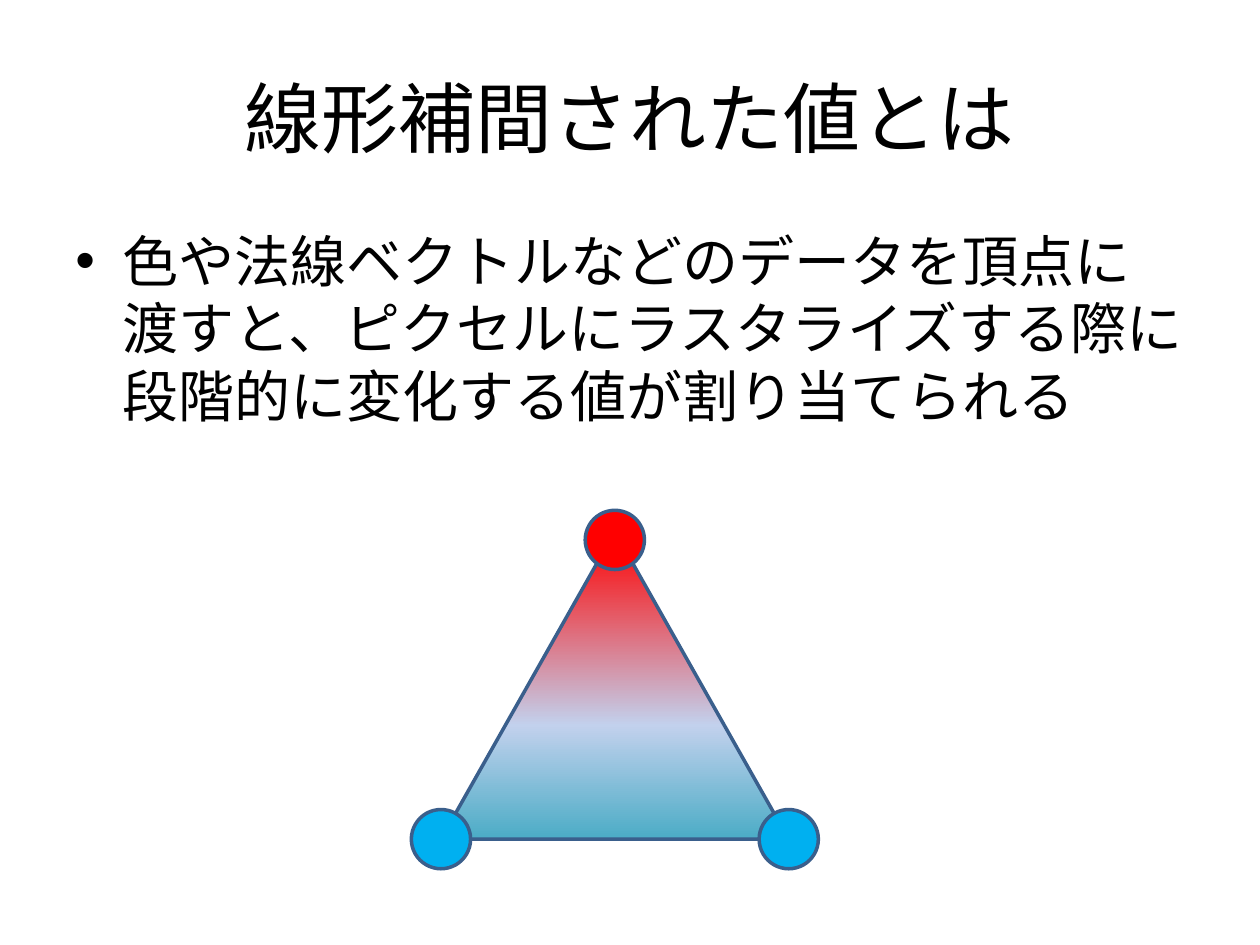
from copy import deepcopy

from lxml import etree
from pptx import Presentation
from pptx.dml.color import RGBColor
from pptx.enum.shapes import MSO_SHAPE
from pptx.enum.text import MSO_ANCHOR, PP_ALIGN
from pptx.oxml.ns import qn
from pptx.util import Pt

TRIANGLE = MSO_SHAPE.ISOSCELES_TRIANGLE
OVAL = MSO_SHAPE.OVAL
MIDDLE, TOP = MSO_ANCHOR.MIDDLE, MSO_ANCHOR.TOP
CENTER, LEFT = PP_ALIGN.CENTER, PP_ALIGN.LEFT

BLACK = RGBColor(0x00, 0x00, 0x00)
RED = RGBColor(0xFF, 0x00, 0x00)
PALE_BLUE = RGBColor(0xC2, 0xD1, 0xED)
TEAL = RGBColor(0x4B, 0xAC, 0xC6)
SKY = RGBColor(0x00, 0xB0, 0xF0)
OUTLINE = RGBColor(0x3A, 0x5F, 0x8C)


class Deck:
    font = "Noto Sans CJK JP"
    line_width = 2

    def __init__(self, prs):
        self.slide = prs.slides.add_slide(prs.slide_layouts[5])

    def set_text(self, sp, text, size, align, anchor):
        tf = sp.text_frame
        tf.word_wrap = True
        tf.vertical_anchor = anchor
        p = tf.paragraphs[0]
        p.text = text
        p.alignment = align
        for r in p.runs:
            r.font.size = Pt(size)
            r.font.name = self.font
            r.font.color.rgb = BLACK
            ea = etree.SubElement(r.font._element, qn("a:ea"))
            ea.set("typeface", self.font)
        return p

    def title(self, text, x, y, w, h):
        sp = self.slide.shapes.title
        sp.left, sp.top, sp.width, sp.height = Pt(x), Pt(y), Pt(w), Pt(h)
        self.set_text(sp, text, 44, CENTER, MIDDLE)

    def bullet(self, text, x, y, w, h, indent=27):
        sp = self.slide.shapes.add_textbox(Pt(x), Pt(y), Pt(w), Pt(h))
        p = self.set_text(sp, text, 32, LEFT, TOP)
        p.space_before = Pt(6.4)
        pPr = p._p.get_or_add_pPr()
        pPr.set("marL", str(Pt(indent)))
        pPr.set("indent", str(-Pt(indent)))
        etree.SubElement(pPr, qn("a:buFont")).set("typeface", "Arial")
        etree.SubElement(pPr, qn("a:buChar")).set("char", "•")

    def shape(self, kind, x, y, w, h):
        sp = self.slide.shapes.add_shape(kind, Pt(x), Pt(y), Pt(w), Pt(h))
        sp.shadow.inherit = False
        sp.line.color.rgb = OUTLINE
        sp.line.width = Pt(self.line_width)
        return sp

    def gradient_triangle(self, x, y, w, h, stops):
        fill = self.shape(TRIANGLE, x, y, w, h).fill
        fill.gradient()
        fill.gradient_angle = 270
        first = fill.gradient_stops[0]._gs
        first.addnext(deepcopy(first))
        for stop, (position, color) in zip(fill.gradient_stops, stops):
            stop.position = position
            stop.color.rgb = color

    def vertex(self, cx, cy, color, size=33.84):
        sp = self.shape(OVAL, cx - size / 2, cy - size / 2, size, size)
        sp.fill.solid()
        sp.fill.fore_color.rgb = color


def main():
    prs = Presentation()
    prs.slide_width, prs.slide_height = Pt(720), Pt(540)
    deck = Deck(prs)

    x, y, w, h = 252, 303.84, 198.72, 175.68
    apex_inset = 4.7
    deck.gradient_triangle(x, y, w, h, [(0, RED), (0.63, PALE_BLUE), (1, TEAL)])
    deck.title("線形補間された値とは", 36, 21.6, 648, 90)
    deck.bullet(
        "色や法線ベクトルなどのデータを頂点に渡すと、"
        "ピクセルにラスタライズする際に段階的に変化する値が割り当てられる",
        36, 126, 648, 356.4)
    deck.vertex(x + w / 2, y + apex_inset, RED)
    for cx in (x, x + w):
        deck.vertex(cx, y + h, SKY)

    prs.save("out.pptx")


if __name__ == "__main__":
    main()
